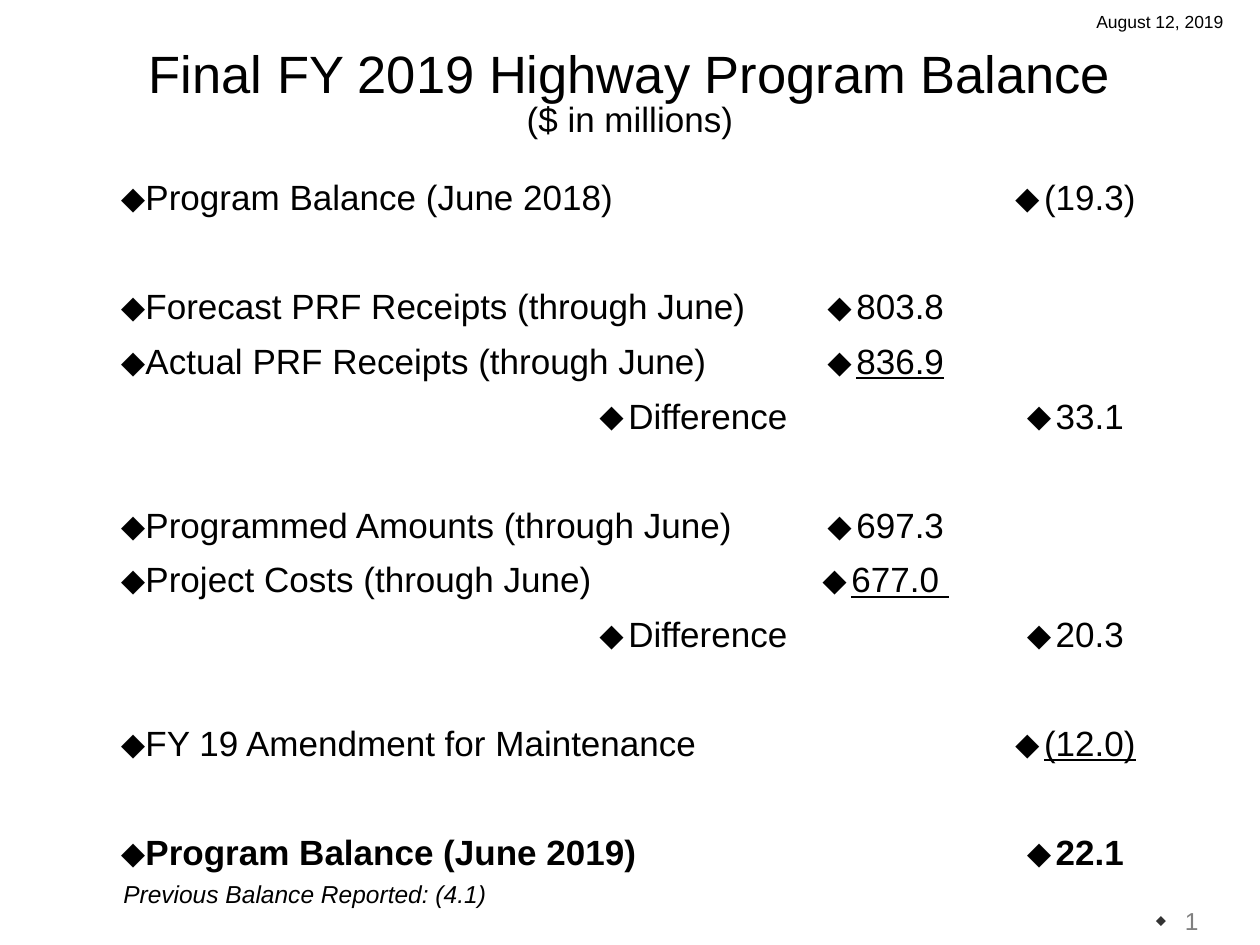
from lxml import etree
from pptx import Presentation
from pptx import util as u
from pptx.dml.color import RGBColor
from pptx.enum import text
from pptx.oxml.ns import qn

# Content: label, receipts or costs, balance effect
ROWS = [
    ("Program Balance (June 2018)", "", "(19.3)"),
    ("", "", ""),
    ("Forecast PRF Receipts (through June)", "803.8", ""),
    ("Actual PRF Receipts (through June)", "836.9", ""),
    ("Difference", "", "33.1"),
    ("", "", ""),
    ("Programmed Amounts (through June)", "697.3", ""),
    ("Project Costs (through June)", "677.0 ", ""),
    ("Difference", "", "20.3"),
    ("", "", ""),
    ("FY 19 Amendment for Maintenance", "", "(12.0)"),
    ("", "", ""),
    ("Program Balance (June 2019)", "", "22.1"),
]
UNDERLINED = {"836.9", "677.0 ", "(12.0)"}
TITLE = "Final FY 2019 Highway Program Balance"
SUBTITLE = "($ in millions)"
DATE = "August 12, 2019"
FOOTNOTE = "Previous Balance Reported: (4.1)"
PAGE_NUMBER = "1"

THEME = {
    "font": "Arial", "ink": "000000", "bullet": "333333", "muted": "808080",
    "title": 30, "body": 20, "note": 14, "date": 10,
}
COLUMN_WIDTHS = (5.49, 1.36, 1.65)
TABLE_LEFT, TABLE_TOP, TABLE_HEIGHT = 0.86, 1.36, 5.63
BULLET_INDENT = 0.23
NO_STYLE_NO_GRID = "{2D5ABB26-0587-4C30-8999-92F81FD0307C}"
ALIGN = text.PP_ALIGN
ANCHOR = text.MSO_ANCHOR


def add_run(paragraph, words, size, color="ink", **styles):
    run = paragraph.add_run()
    run.text = words
    run.font.name = THEME["font"]
    run.font.size = u.Pt(THEME[size])
    run.font.color.rgb = RGBColor.from_string(THEME[color])
    for name, value in styles.items():
        setattr(run.font, name, value)


def add_bullet(paragraph, color, indent=0, percent=100):
    properties = paragraph._p.get_or_add_pPr()
    properties.set("marL", str(u.Inches(indent)))
    properties.set("indent", str(-u.Inches(indent)))
    bullet_color = etree.SubElement(properties, qn("a:buClr"))
    etree.SubElement(bullet_color, qn("a:srgbClr"), val=THEME[color])
    etree.SubElement(properties, qn("a:buSzPct"), val=str(percent * 1000))
    etree.SubElement(properties, qn("a:buFont"), typeface=THEME["font"])
    etree.SubElement(properties, qn("a:buChar"), char="⬥")


def add_text(slide, box, align, anchor=ANCHOR.TOP):
    frame = slide.shapes.add_textbox(*map(u.Inches, box)).text_frame
    frame.word_wrap = True
    frame.vertical_anchor = anchor
    paragraph = frame.paragraphs[0]
    paragraph.alignment = align
    return paragraph


def add_balance_table(slide):
    table = slide.shapes.add_table(
        len(ROWS), len(COLUMN_WIDTHS), u.Inches(TABLE_LEFT), u.Inches(TABLE_TOP),
        u.Inches(sum(COLUMN_WIDTHS)), u.Inches(TABLE_HEIGHT)).table
    table.first_row = table.horz_banding = False
    table._tbl.tblPr.find(qn("a:tableStyleId")).text = NO_STYLE_NO_GRID
    for column, width in zip(table.columns, COLUMN_WIDTHS):
        column.width = u.Inches(width)
    for r, row in enumerate(ROWS):
        for c, words in enumerate(row):
            cell = table.cell(r, c)
            cell.fill.background()
            cell.vertical_anchor = ANCHOR.MIDDLE
            cell.margin_top = cell.margin_bottom = u.Inches(0.03)
            if not words:
                continue
            paragraph = cell.text_frame.paragraphs[0]
            label_align = ALIGN.RIGHT if words == "Difference" else ALIGN.LEFT
            align = ALIGN.CENTER if c else label_align
            paragraph.alignment = align
            add_bullet(paragraph, "ink", 0 if align == ALIGN.LEFT else BULLET_INDENT)
            add_run(paragraph, words, "body", bold=r == len(ROWS) - 1,
                    underline=words in UNDERLINED)


def main():
    presentation = Presentation()
    presentation.slide_width = u.Inches(10)
    presentation.slide_height = u.Inches(7.5)
    slide = presentation.slides.add_slide(presentation.slide_layouts[6])

    # Title with units
    heading = add_text(slide, (0, 0.2, 10, 1.11), ALIGN.CENTER, ANCHOR.MIDDLE)
    heading.line_spacing = 0.85
    add_run(heading, TITLE, "title")
    heading.add_line_break()
    add_run(heading, SUBTITLE, "body")

    # Date
    add_run(add_text(slide, (8.41, 0.04, 1.59, 0.27), ALIGN.CENTER), DATE, "date")

    # Balance table and footnote
    add_balance_table(slide)
    footnote = add_text(slide, (0.88, 6.93, 4.32, 0.34), ALIGN.LEFT)
    add_run(footnote, FOOTNOTE, "note", italic=True)

    # Page number
    number = add_text(slide, (7.21, 6.97, 2.4, 0.5), ALIGN.RIGHT, ANCHOR.BOTTOM)
    add_bullet(number, "bullet", BULLET_INDENT, 60)
    add_run(number, PAGE_NUMBER, "note", "muted")

    presentation.save("out.pptx")


if __name__ == "__main__":
    main()
